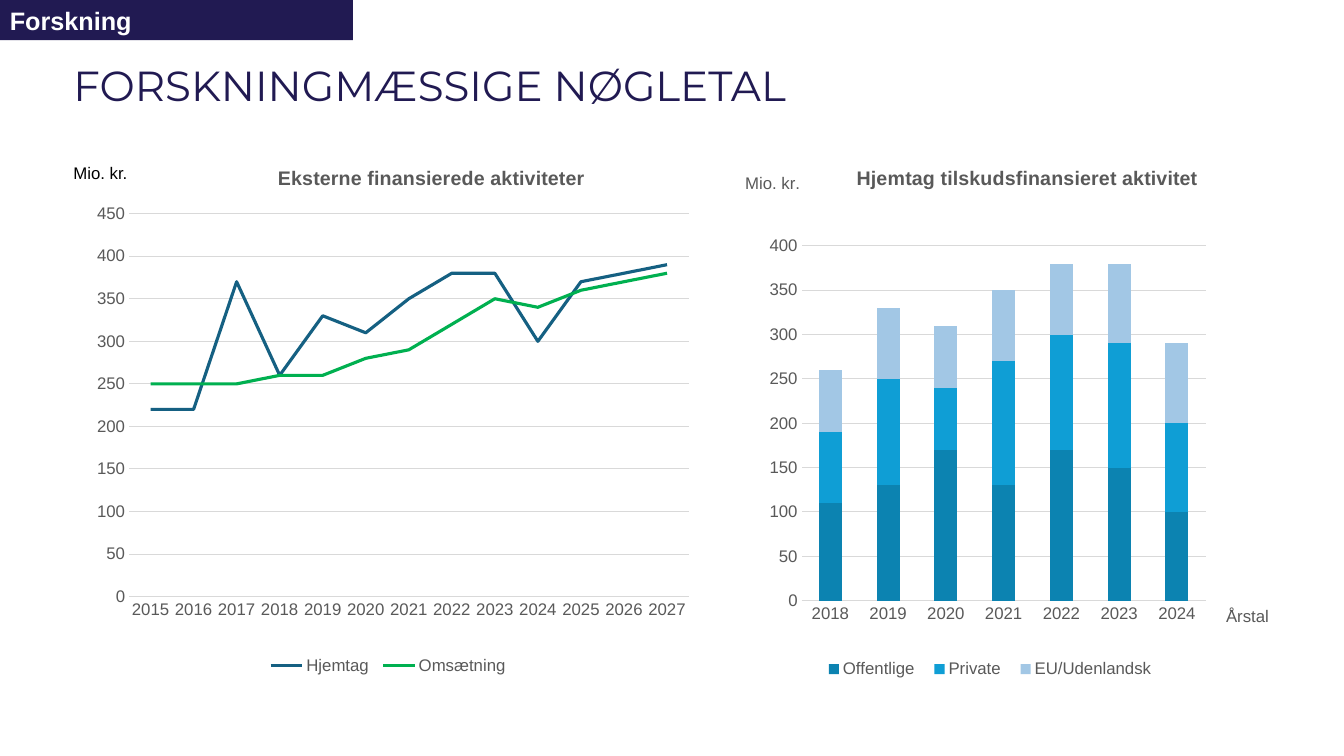
from dataclasses import dataclass

from lxml import etree
from pptx import Presentation
from pptx import util as u
from pptx.chart import data as cd
from pptx.dml import color as dc
from pptx.enum import chart as ce
from pptx.enum import shapes, text
from pptx.oxml import ns

HUES = {"navy": "211A52", "white": "FFFFFF", "black": "000000",
        "gray": "595959", "grid": "D9D9D9", "blue": "156082",
        "green": "00B050", "teal": "0C83B1", "sky": "0F9ED5", "pale": "A2C7E5"}

Box = tuple[float, float, float, float]
Spot = tuple[float, float]


@dataclass
class Line:
    name: str
    hue: str
    vals: list[int]


@dataclass
class Label:
    words: str
    spot: Spot


@dataclass
class Graph:
    kind: ce.XL_CHART_TYPE
    box: Box
    plot: Box
    key: Box
    years: range
    top: int
    head: Label
    lines: list[Line]
    foot: Label | None = None
    side: Label | None = None


@dataclass
class Note:
    words: str
    box: Box
    size: int
    face: str
    hue: str
    bold: bool = False
    fill: str | None = None
    mid: bool = False


NOTES = [
    Note("FORSKNINGMÆSSIGE NØGLETAL", (0.63, 0.44, 10.67, 0.86), 30,
         "Montserrat", "navy", mid=True),
    Note("Forskning", (0, 0, 3.5, 0.4), 18, "Arial", "white", True, "navy"),
]
UNIT = Note("Mio. kr.", (0.63, 1.57, 1.16, 0.3), 12, "Arial", "black")

GRAPHS = [
    Graph(ce.XL_CHART_TYPE.LINE, (0.72, 1.6, 6.26, 5.28),
          (0.56, 0.52, 5.55, 3.8), (1.88, 4.82, 2.5, 0.37),
          range(2015, 2028), 450,
          Label("Eksterne finansierede aktiviteter", (2, 0)),
          [Line("Hjemtag", "blue", [220, 220, 370, 260, 330, 310, 350, 380,
                                    380, 300, 370, 380, 390]),
           Line("Omsætning", "green", [250, 250, 250, 260, 260, 280, 290, 320,
                                       350, 340, 360, 370, 380])]),
    Graph(ce.XL_CHART_TYPE.COLUMN_STACKED, (6.67, 1.33, 6.32, 5.73),
          (1.28, 1.11, 4.01, 3.52), (1.41, 5.14, 3.48, 0.34),
          range(2018, 2025), 400,
          Label("Hjemtag tilskudsfinansieret aktivitet", (1.79, 0.27)),
          [Line("Offentlige", "teal", [110, 130, 170, 130, 170, 150, 100]),
           Line("Private", "sky", [80, 120, 70, 140, 130, 140, 100]),
           Line("EU/Udenlandsk", "pale", [70, 80, 70, 80, 80, 90, 90])],
          Label("Årstal", (5.46, 4.65)), Label("Mio. kr.", (0.69, 0.35))),
]


def rgb(hue: str) -> dc.RGBColor:
    return dc.RGBColor.from_string(HUES[hue])


def style(font, size: int, hue: str, bold: bool = False,
          face: str = "Arial") -> None:
    font.size, font.name, font.bold = u.Pt(size), face, bold
    font.color.rgb = rgb(hue)


def place(node, spot: int, box: Box | Spot, area: Box,
          inner: bool = False) -> None:
    for old in node.findall(ns.qn("c:layout")):
        node.remove(old)
    lay = etree.Element(ns.qn("c:layout"))
    man = etree.SubElement(lay, ns.qn("c:manualLayout"))
    pairs = [("layoutTarget", "inner")] if inner else []
    pairs += [("xMode", "edge"), ("yMode", "edge")]
    wide, high = area[2:]
    pairs += [(tag, str(val / full)) for tag, val, full
              in zip("xywh", box, (wide, high, wide, high))]
    for tag, val in pairs:
        etree.SubElement(man, ns.qn(f"c:{tag}")).set("val", val)
    node.insert(spot, lay)


def draw_title(title, label: Label, area: Box, size: int, bold: bool) -> None:
    title.text_frame.text = label.words
    style(title.text_frame.paragraphs[0].runs[0].font, size, "gray", bold)
    for body in title.element.iter(ns.qn("a:bodyPr")):
        body.set("rot", "0")
        body.set("vert", "horz")
    place(title.element, 1, label.spot, area)


def draw_axis(axis, label: Label | None, area: Box) -> None:
    axis.major_tick_mark = axis.minor_tick_mark = ce.XL_TICK_MARK.NONE
    style(axis.tick_labels.font, 12, "gray")
    axis.has_title = label is not None
    if label:
        draw_title(axis.axis_title, label, area, 12, False)


def draw_graph(slide, graph: Graph) -> None:
    data = cd.CategoryChartData(number_format="#,##0")
    data.categories = [str(year) for year in graph.years]
    for line in graph.lines:
        data.add_series(line.name, line.vals)
    chart = slide.shapes.add_chart(
        graph.kind, *map(u.Inches, graph.box), data).chart
    style(chart.font, 10, "black", face="Lato")
    chart.has_title = True
    draw_title(chart.chart_title, graph.head, graph.box, 14, True)

    chart.has_legend = True
    chart.legend.position = ce.XL_LEGEND_POSITION.BOTTOM
    chart.legend.include_in_layout = False
    style(chart.legend.font, 12, "gray")
    place(chart.element.xpath("c:chart/c:legend")[0], 1, graph.key, graph.box)
    place(chart.element.xpath("c:chart/c:plotArea")[0], 0, graph.plot,
          graph.box, True)

    base, scale = chart.category_axis, chart.value_axis
    draw_axis(base, graph.foot, graph.box)
    draw_axis(scale, graph.side, graph.box)
    scale.minimum_scale, scale.maximum_scale = 0, graph.top
    scale.major_unit = 50
    scale.tick_labels.number_format = "#,##0"
    scale.tick_labels.number_format_is_linked = False
    scale.format.line.fill.background()
    scale.has_major_gridlines = True
    for rule in (base.format.line, scale.major_gridlines.format.line):
        rule.color.rgb, rule.width = rgb("grid"), u.Pt(0.75)

    plot = chart.plots[0]
    plot.vary_by_categories = False
    stacked = graph.kind == ce.XL_CHART_TYPE.COLUMN_STACKED
    if stacked:
        plot.gap_width, plot.overlap = 150, 100
    for row, line in zip(plot.series, graph.lines):
        if stacked:
            row.format.fill.solid()
            row.format.fill.fore_color.rgb = rgb(line.hue)
        else:
            row.smooth = False
            row.marker.style = ce.XL_MARKER_STYLE.NONE
            row.format.line.color.rgb = rgb(line.hue)
            row.format.line.width = u.Pt(2.25)


def draw_note(slide, note: Note) -> None:
    box = map(u.Inches, note.box)
    if note.fill:
        shape = slide.shapes.add_shape(shapes.MSO_SHAPE.RECTANGLE, *box)
        shape.shadow.inherit = False
        shape.fill.solid()
        shape.fill.fore_color.rgb = rgb(note.fill)
        shape.line.fill.background()
    else:
        shape = slide.shapes.add_textbox(*box)
    frame = shape.text_frame
    frame.word_wrap = True
    frame.text = note.words
    frame.vertical_anchor = (text.MSO_ANCHOR.MIDDLE if note.mid
                             else text.MSO_ANCHOR.TOP)
    para = frame.paragraphs[0]
    para.alignment = text.PP_ALIGN.LEFT
    if note.mid:
        para.line_spacing = 0.9
    else:
        frame.auto_size = text.MSO_AUTO_SIZE.SHAPE_TO_FIT_TEXT
    style(para.runs[0].font, note.size, note.hue, note.bold, note.face)


def main() -> None:
    deck = Presentation()
    deck.slide_width, deck.slide_height = u.Inches(13.33), u.Inches(7.5)
    slide = deck.slides.add_slide(deck.slide_layouts[6])
    for note in NOTES:
        draw_note(slide, note)
    draw_graph(slide, GRAPHS[0])
    draw_note(slide, UNIT)
    draw_graph(slide, GRAPHS[1])
    deck.save("out.pptx")


if __name__ == "__main__":
    main()
